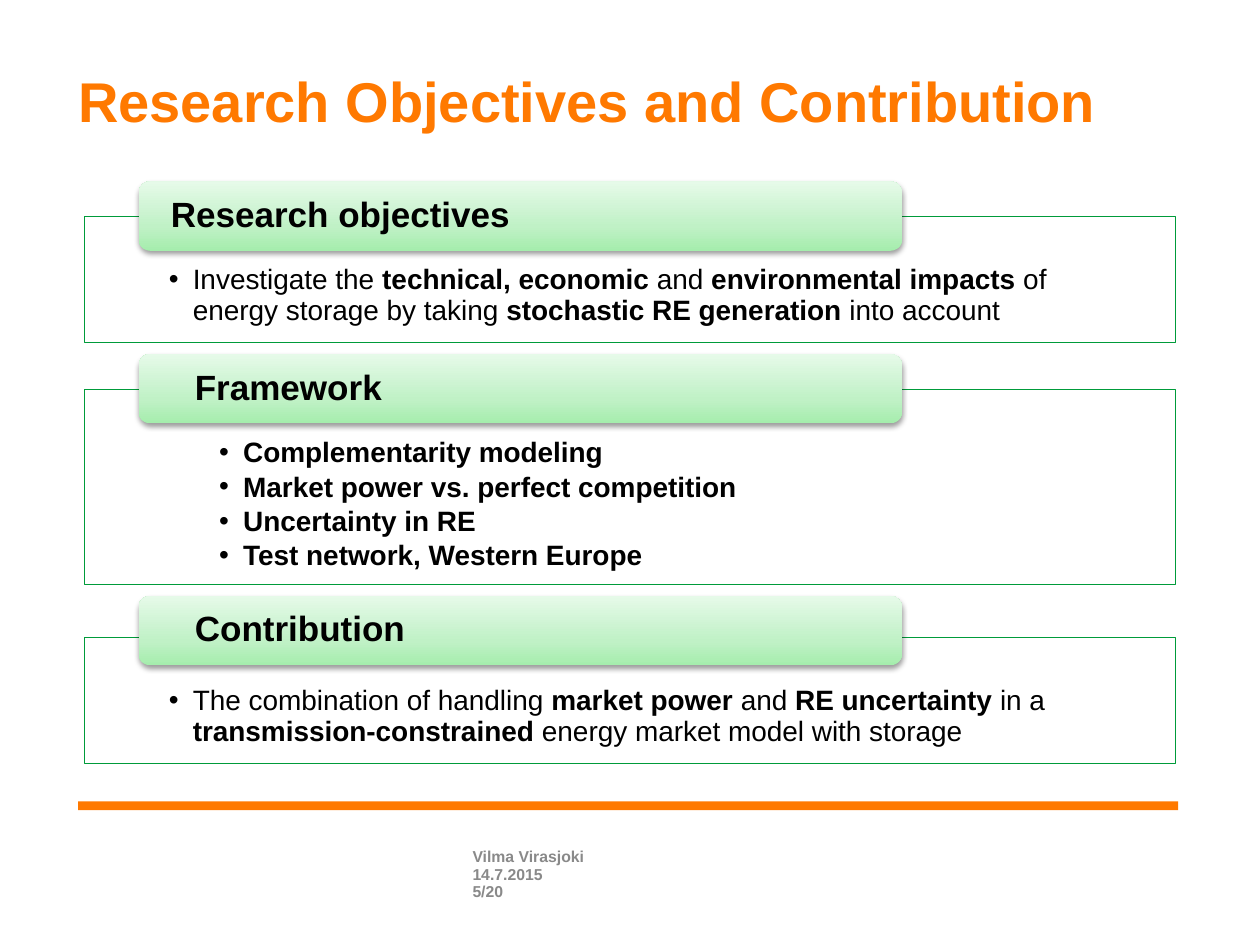
from dataclasses import dataclass

from lxml.etree import SubElement
from pptx import Presentation
from pptx.dml.color import RGBColor
from pptx.enum.shapes import MSO_SHAPE
from pptx.enum.text import MSO_ANCHOR, PP_ALIGN
from pptx.oxml.ns import qn
from pptx.util import Inches, Pt


@dataclass(frozen=True)
class Theme:
    font: str = "Arial"
    accent: str = "FF7900"
    frame: str = "009B3A"
    paper: str = "FFFFFF"
    ink: str = "000000"
    muted: str = "898989"
    gradient: tuple = ((0, "A5EDAD"), (35, "C0F1C6"), (100, "E6FAE9"))
    title: int = 32
    heading: int = 20
    body: int = 16
    footer: int = 9


T = Theme()

# Layout in inches
LEFT, WIDTH = 0.67, 8.66
TAB_LEFT, TAB_WIDTH, TAB_HEIGHT = 1.1, 6.06, 0.55
TOP, GAP = 1.44, 0.09
STEP = 0.19

# Heading, heading indent, tab rise above frame, frame height, bullet indent, bullets
SECTIONS = [
    ("Research objectives", 0, 0.28, 1, STEP,
     ["Investigate the **technical, economic **and** environmental impacts **of "
      "energy storage by taking **stochastic RE generation** into account"]),
    ("Framework", STEP, 0.28, 1.55, 0.59,
     ["**Complementarity modeling**", "**Market power vs. perfect competition**",
      "**Uncertainty in RE**", "**Test network, Western Europe**"]),
    ("Contribution", STEP, 0.33, 1, STEP,
     ["The combination of handling **market power **and** RE uncertainty **in a "
      "**transmission-constrained** energy market model with storage"]),
]
FOOTER = ["Vilma Virasjoki", "14.7.2015", "5/20"]


def rgb(code):
    return RGBColor.from_string(code)


def child(parent, tag, **attrs):
    return SubElement(parent, qn(tag), {k: str(v) for k, v in attrs.items()})


def set_frame(tf, insets=(0, 0, 0, 0), anchor=MSO_ANCHOR.TOP):
    tf.word_wrap = True
    tf.vertical_anchor = anchor
    tf.margin_left, tf.margin_top, tf.margin_right, tf.margin_bottom = map(Inches, insets)


def style_run(r, size, color, bold=True):
    r.font.name, r.font.size, r.font.bold = T.font, Pt(size), bold
    r.font.color.rgb = rgb(color)


def add_label(s, box, text, size, color):
    tf = s.shapes.add_textbox(*map(Inches, box)).text_frame
    set_frame(tf)
    tf.text = text
    style_run(tf.paragraphs[0].runs[0], size, color)


def add_box(s, kind, box):
    sp = s.shapes.add_shape(kind, *map(Inches, box))
    sp.shadow.inherit = False
    sp.line.fill.background()
    return sp


def indent(p, left, hanging=0):
    pPr = p._p.get_or_add_pPr()
    pPr.set("marL", str(Inches(left)))
    pPr.set("indent", str(Inches(-hanging)))
    p.alignment = PP_ALIGN.LEFT
    p.line_spacing = 0.9
    return pPr


def add_panel(s, box, bullet_indent, bullets):
    sp = add_box(s, MSO_SHAPE.RECTANGLE, box)
    sp.fill.solid()
    sp.fill.fore_color.rgb = rgb(T.paper)
    child(next(sp._element.spPr.iter(qn("a:srgbClr"))), "a:alpha", val=90000)
    sp.line.color.rgb = rgb(T.frame)
    sp.line.width = Pt(0.75)
    tf = sp.text_frame
    set_frame(tf, (0.67, 0.39, 0.67, 0.12))
    for i, bullet in enumerate(bullets):
        p = tf.add_paragraph() if i else tf.paragraphs[0]
        pPr = indent(p, bullet_indent, STEP)
        child(pPr, "a:buFont", typeface=T.font)
        child(pPr, "a:buChar", char="•")
        p.space_after = Pt(0.15 * T.body)
        # Every second part between ** marks is bold
        for n, part in enumerate(bullet.split("**")):
            if part:
                r = p.add_run()
                r.text = part
                style_run(r, T.body, T.ink, n % 2 == 1)


def add_tab(s, top, text, left_indent):
    sp = add_box(s, MSO_SHAPE.ROUNDED_RECTANGLE, (TAB_LEFT, top, TAB_WIDTH, TAB_HEIGHT))
    spPr = sp._element.spPr
    # Three-stop gradient, darkest at the bottom
    sp.fill.gradient()
    sp.fill.gradient_angle = 90
    stops = next(spPr.iter(qn("a:gsLst")))
    for gs in list(stops):
        stops.remove(gs)
    for pos, color in T.gradient:
        child(child(stops, "a:gs", pos=pos * 1000), "a:srgbClr", val=color)
    # Soft shadow below
    shadow = child(spPr.find(qn("a:effectLst")), "a:outerShdw", blurRad=Pt(3.1),
                   dist=Pt(1.6), dir=90 * 60000, rotWithShape=0)
    child(child(shadow, "a:srgbClr", val=T.ink), "a:alpha", val=38000)
    tf = sp.text_frame
    set_frame(tf, (0.23, 0, 0.23, 0), MSO_ANCHOR.MIDDLE)
    tf.text = text
    p = tf.paragraphs[0]
    indent(p, left_indent)
    style_run(p.runs[0], T.heading, T.ink)


def main():
    prs = Presentation()
    prs.slide_width, prs.slide_height = Inches(10), Inches(7.5)
    s = prs.slides.add_slide(prs.slide_layouts[6])

    # Rule above the footer
    rule = add_box(s, MSO_SHAPE.RECTANGLE, (0.62, 6.36, 8.73, 0.07))
    rule.fill.solid()
    rule.fill.fore_color.rgb = rgb(T.accent)

    # Title
    add_label(s, (0.62, 0.53, 8.94, 1.18), "Research Objectives and Contribution",
              T.title, T.accent)

    # Stacked sections
    top = TOP
    for heading, head_indent, rise, height, bullet_indent, bullets in SECTIONS:
        add_panel(s, (LEFT, top + rise, WIDTH, height), bullet_indent, bullets)
        add_tab(s, top, heading, head_indent)
        top += rise + height + GAP

    # Footer lines
    for i, line in enumerate(FOOTER):
        add_label(s, (3.75, 6.72 + 0.14 * i, 1.69, 0.14), line, T.footer, T.muted)

    prs.save("out.pptx")


if __name__ == "__main__":
    main()
